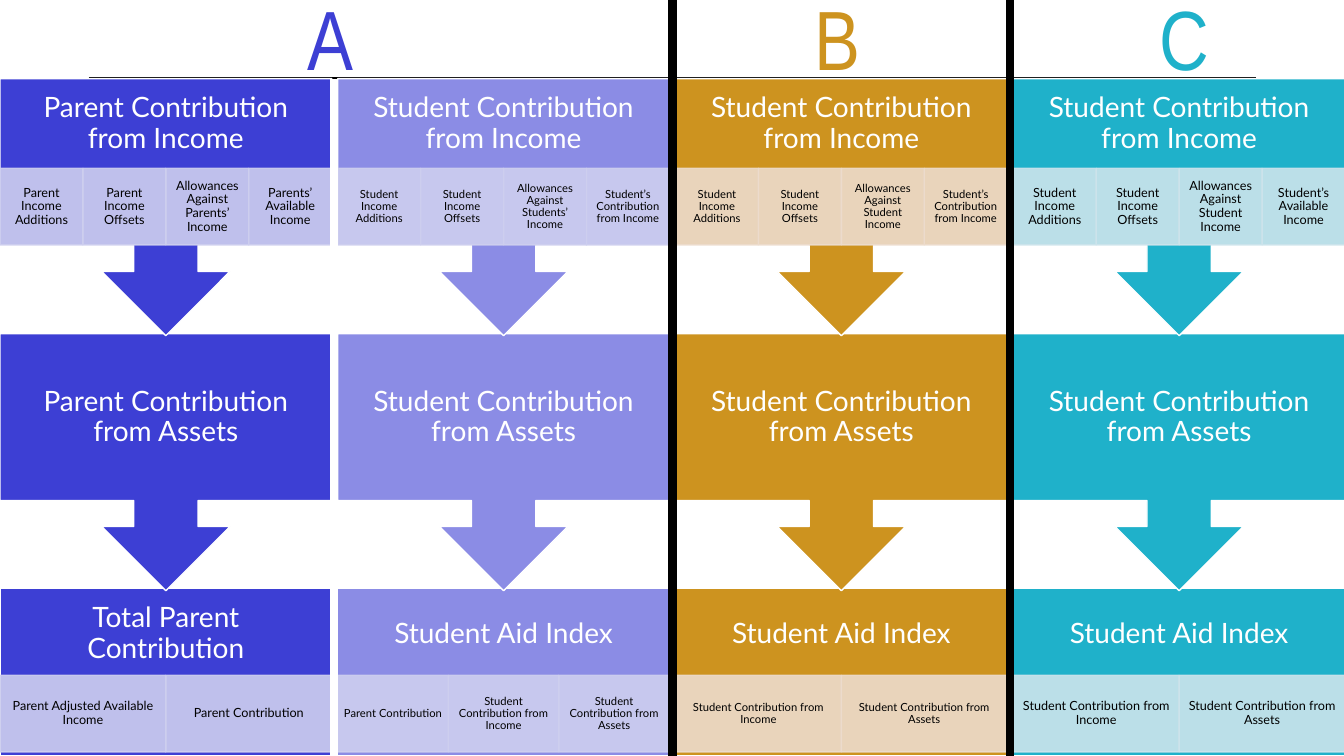
from lxml.etree import SubElement
from pptx import Presentation
from pptx.dml.color import RGBColor
from pptx.enum.shapes import MSO_CONNECTOR, MSO_SHAPE
from pptx.enum.text import MSO_ANCHOR, PP_ALIGN
from pptx.oxml.ns import qn
from pptx.util import Inches, Pt

BLACK = RGBColor(0x00, 0x00, 0x00)
WHITE = RGBColor(0xFF, 0xFF, 0xFF)
INDIGO = RGBColor(0x3D, 0x3F, 0xD4)
LAVENDER = RGBColor(0x8B, 0x8C, 0xE5)
GOLD = RGBColor(0xCD, 0x93, 0x1F)
TEAL = RGBColor(0x1F, 0xB1, 0xCA)
PALE_VIOLET = RGBColor(0xCE, 0xCF, 0xEF)
PALE_GOLD = RGBColor(0xED, 0xDC, 0xCD)
PALE_TEAL = RGBColor(0xCD, 0xE4, 0xEC)

COLUMN_WIDTH, COLUMN_PITCH = 3.29, 3.35
INCOME_TOP, ASSETS_TOP, TOTAL_TOP = 0.78, 3.31, 5.84
CALLOUT_HEIGHT, TOTAL_HEIGHT = 2.55, 1.66
INCOME_CELLS_TOP, TOTAL_CELLS_TOP, CELL_HEIGHT = 1.67, 6.7, 0.76

# Fill, cell fill, cell text size, three headings, income cells, total cells
COLUMNS = [
    (INDIGO, PALE_VIOLET, 9,
     ["Parent Contribution from Income", "Parent Contribution from Assets",
      "Total Parent Contribution"],
     ["Parent Income Additions", "Parent Income Offsets",
      "Allowances Against Parents’ Income", "Parents’ Available Income"],
     ["Parent Adjusted Available Income", "Parent Contribution"]),
    (LAVENDER, PALE_VIOLET, 8,
     ["Student Contribution from Income", "Student Contribution from Assets",
      "Student Aid Index"],
     ["Student Income Additions", "Student Income Offsets",
      "Allowances Against Students’ Income", "Student’s Contribution from Income"],
     ["Parent Contribution", "Student Contribution from Income",
      "Student Contribution from Assets"]),
    (GOLD, PALE_GOLD, 8,
     ["Student Contribution from Income", "Student Contribution from Assets",
      "Student Aid Index"],
     ["Student Income Additions", "Student Income Offsets",
      "Allowances Against Student Income", "Student’s Contribution from Income"],
     ["Student Contribution from Income", "Student Contribution from Assets"]),
    (TEAL, PALE_TEAL, 9,
     ["Student Contribution from Income", "Student Contribution from Assets",
      "Student Aid Index"],
     ["Student Income Additions", "Student Income Offsets",
      "Allowances Against Student Income", "Student’s Available Income"],
     ["Student Contribution from Income", "Student Contribution from Assets"]),
]
LETTERS = [("A", 2.95, INDIGO), ("B", 7.98, GOLD), ("C", 11.4, TEAL)]


class FlowSlide:
    body_font = "Lato"
    letter_font = "Arial Narrow"

    def __init__(self, page):
        self.page = page

    def add_text(self, frame, text, size, font, color):
        frame.word_wrap = True
        para = frame.paragraphs[0]
        span = para.add_run()
        span.text = text
        span.font.size = Pt(size)
        span.font.name = font
        span.font.color.rgb = color
        return para

    def block(self, group, kind, bounds, fill, line, text, size, color, insets):
        """Add a filled shape with centred text; insets are left/right, top, bottom."""
        box = group.shapes.add_shape(kind, *map(Inches, bounds))
        box.shadow.inherit = False
        box.fill.solid()
        box.fill.fore_color.rgb = fill
        box.line.color.rgb = line
        box.line.width = Pt(1)
        frame = box.text_frame
        side, top, bottom = insets
        frame.margin_left = frame.margin_right = Inches(side)
        frame.margin_top, frame.margin_bottom = Inches(top), Inches(bottom)
        frame.vertical_anchor = MSO_ANCHOR.MIDDLE
        para = self.add_text(frame, text, size, self.body_font, color)
        para.alignment = PP_ALIGN.CENTER
        para.line_spacing = 0.9
        return box

    def heading(self, group, kind, bounds, fill, text, below=0):
        """Add a step block, keeping the given height free below its text."""
        self.block(group, kind, bounds, fill, WHITE, text, 20, WHITE,
                   (0.16, 0.16, 0.16 + below))

    def cells(self, group, left, top, texts, fill, size):
        """Split the column width evenly between slightly transparent cells."""
        width = COLUMN_WIDTH / len(texts)
        side = 0.07 if size == 9 else 0.06
        for index, text in enumerate(texts):
            bounds = (left + index * width, top, width, CELL_HEIGHT)
            box = self.block(group, MSO_SHAPE.RECTANGLE, bounds, fill, fill,
                             text, size, BLACK, (side, 0.01, 0.01))
            for color in box._element.spPr.iter(qn("a:srgbClr")):
                SubElement(color, qn("a:alpha"), val="90000")

    def column(self, left, fill, pale, size, headings, income, total):
        group = self.page.shapes.add_group_shape()
        income_text, assets_text, total_text = headings
        callout = MSO_SHAPE.DOWN_ARROW_CALLOUT
        self.heading(group, MSO_SHAPE.RECTANGLE,
                     (left, TOTAL_TOP, COLUMN_WIDTH, TOTAL_HEIGHT),
                     fill, total_text, CELL_HEIGHT)
        self.cells(group, left, TOTAL_CELLS_TOP, total, pale, size)
        self.heading(group, callout, (left, ASSETS_TOP, COLUMN_WIDTH, CALLOUT_HEIGHT),
                     fill, assets_text)
        self.heading(group, callout, (left, INCOME_TOP, COLUMN_WIDTH, CALLOUT_HEIGHT),
                     fill, income_text, CELL_HEIGHT)
        self.cells(group, left, INCOME_CELLS_TOP, income, pale, size)

    def letter(self, text, left, color):
        box = self.page.shapes.add_textbox(
            Inches(left), Inches(-0.18), Inches(0.96), Inches(1.11))
        self.add_text(box.text_frame, text, 60, self.letter_font, color)

    def line(self, start, end, color, width):
        rule = self.page.shapes.add_connector(
            MSO_CONNECTOR.STRAIGHT, *map(Inches, start + end))
        rule.line.color.rgb = color
        rule.line.width = Pt(width)
        SubElement(rule._element.spPr, qn("a:effectLst"))


def main():
    deck = Presentation()
    deck.slide_width, deck.slide_height = Inches(13.33), Inches(7.5)
    slide = FlowSlide(deck.slides.add_slide(deck.slide_layouts[6]))

    slide.line((0.88, 0.79), (12.46, 0.79), BLACK, 3.5)
    for index, column in enumerate(COLUMNS):
        slide.column(index * COLUMN_PITCH, *column)
    for letter in LETTERS:
        slide.letter(*letter)
    for x, top, color in [(6.67, 0, BLACK), (10.02, 0, BLACK), (3.31, 0.78, WHITE)]:
        slide.line((x, top), (x, 7.5), color, 6)

    deck.save("out.pptx")


if __name__ == "__main__":
    main()
